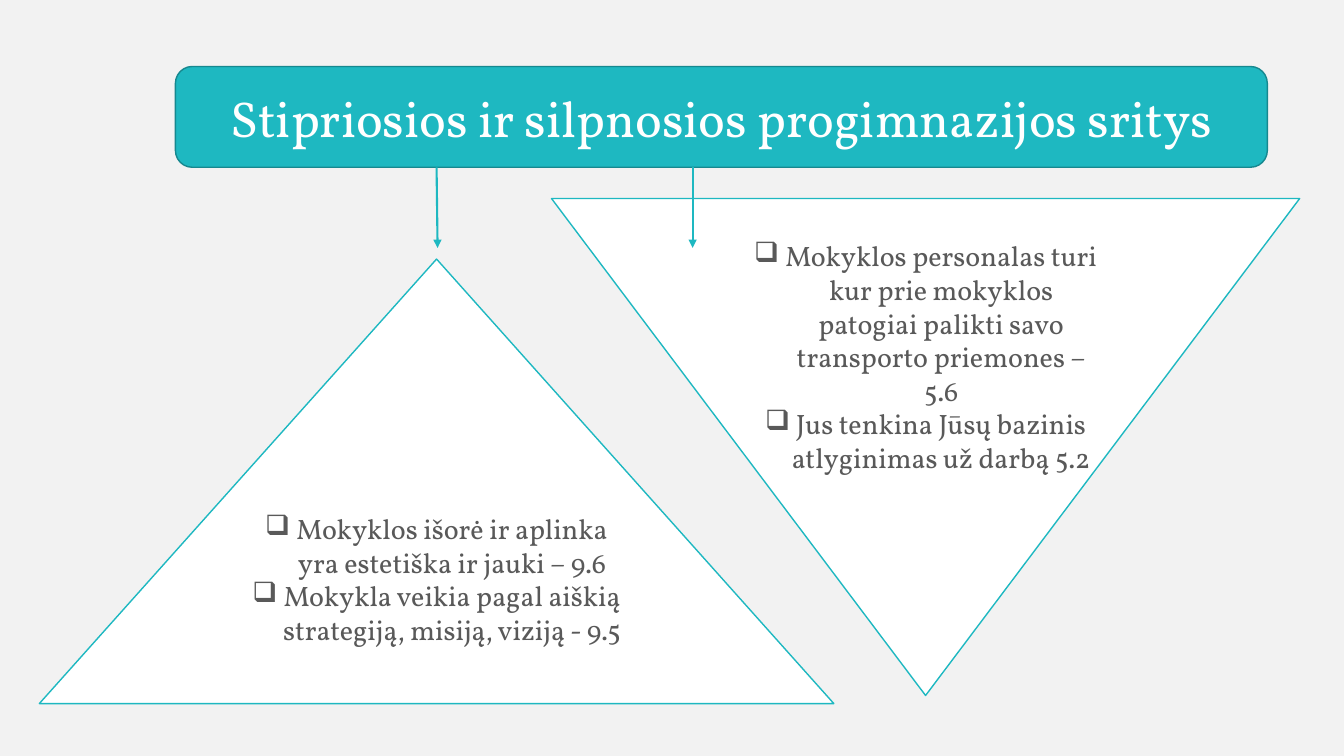
from lxml.etree import SubElement
from pptx import Presentation
from pptx.dml.color import RGBColor
from pptx.enum.shapes import MSO_CONNECTOR, MSO_SHAPE
from pptx.enum.text import MSO_ANCHOR, PP_ALIGN
from pptx.oxml.ns import qn
from pptx.util import Inches, Pt

TEAL = RGBColor(0x1E, 0xB8, 0xC1)
DARK_TEAL = RGBColor(0x16, 0x88, 0x8F)
GREY = RGBColor(0x59, 0x59, 0x59)
PALE = RGBColor(0xF2, 0xF2, 0xF2)
WHITE = RGBColor(0xFF, 0xFF, 0xFF)
FONT = "Vollkorn"
BULLET = "❑"
BULLET_INDENT = Inches(0.31)

HEADING = "Stipriosios ir silpnosios progimnazijos sritys"
HEADING_BOX = (1.74, 0.66, 10.83, 1)

WEAKNESSES = [
    "Mokyklos personalas turi kur prie mokyklos patogiai palikti savo transporto priemones – 5.6",
    "Jus tenkina Jūsų bazinis atlyginimas už darbą 5.2",
]
STRENGTHS = [
    "Mokyklos išorė ir aplinka yra estetiška ir jauki – 9.6",
    "Mokykla veikia pagal aiškią strategiją, misiją, viziją - 9.5",
]
TRIANGLES = [
    (MSO_SHAPE.FLOWCHART_MERGE, (5.47, 1.97, 7.42, 4.93), 0.4, WEAKNESSES),
    (MSO_SHAPE.FLOWCHART_EXTRACT, (0.39, 2.57, 7.88, 4.41), 0.3, STRENGTHS),
]
ARROWS = [(6.87, 6.87), (4.33, 4.34)]
ARROW_LENGTH = 0.8


def add_panel(slide, kind, box, fill, outline):
    panel = slide.shapes.add_shape(kind, *map(Inches, box))
    panel.shadow.inherit = False
    panel.fill.solid()
    panel.fill.fore_color.rgb = fill
    panel.line.color.rgb = outline
    panel.line.width = Pt(1)
    panel.text_frame.word_wrap = True
    return panel


def write(paragraph, text, size, color):
    paragraph.text = text
    paragraph.alignment = PP_ALIGN.CENTER
    font = paragraph.runs[0].font
    font.name, font.size, font.color.rgb = FONT, Pt(size), color


def add_bullet(paragraph):
    properties = paragraph._p.get_or_add_pPr()
    properties.set("marL", str(BULLET_INDENT))
    properties.set("indent", str(-BULLET_INDENT))
    SubElement(properties, qn("a:buChar"), char=BULLET)


def add_heading(slide):
    heading = add_panel(slide, MSO_SHAPE.ROUNDED_RECTANGLE, HEADING_BOX, TEAL, DARK_TEAL)
    heading.text_frame.vertical_anchor = MSO_ANCHOR.MIDDLE
    write(heading.text_frame.paragraphs[0], HEADING, 36, WHITE)


def add_triangle(slide, kind, box, top_margin, findings):
    frame = add_panel(slide, kind, box, WHITE, TEAL).text_frame
    frame.vertical_anchor = MSO_ANCHOR.TOP
    frame.margin_top = Inches(top_margin)
    frame.margin_bottom = 0
    frame.text = "\n".join(findings)
    for paragraph, finding in zip(frame.paragraphs, findings):
        write(paragraph, finding, 20, GREY)
        add_bullet(paragraph)


def add_arrow(slide, start_x, end_x):
    top = HEADING_BOX[1] + HEADING_BOX[3]
    ends = (start_x, top, end_x, top + ARROW_LENGTH)
    arrow = slide.shapes.add_connector(MSO_CONNECTOR.STRAIGHT, *map(Inches, ends))
    arrow.line.color.rgb = TEAL
    arrow.line.width = Pt(1.5)
    SubElement(arrow.line._get_or_add_ln(), qn("a:tailEnd"), type="triangle")
    SubElement(arrow._element.spPr, qn("a:effectLst"))


def main():
    deck = Presentation()
    deck.slide_width, deck.slide_height = Inches(13.33), Inches(7.5)
    slide = deck.slides.add_slide(deck.slide_layouts[6])
    slide.background.fill.solid()
    slide.background.fill.fore_color.rgb = PALE
    add_heading(slide)
    for triangle in TRIANGLES:
        add_triangle(slide, *triangle)
    for arrow in ARROWS:
        add_arrow(slide, *arrow)
    deck.save("out.pptx")


if __name__ == "__main__":
    main()
